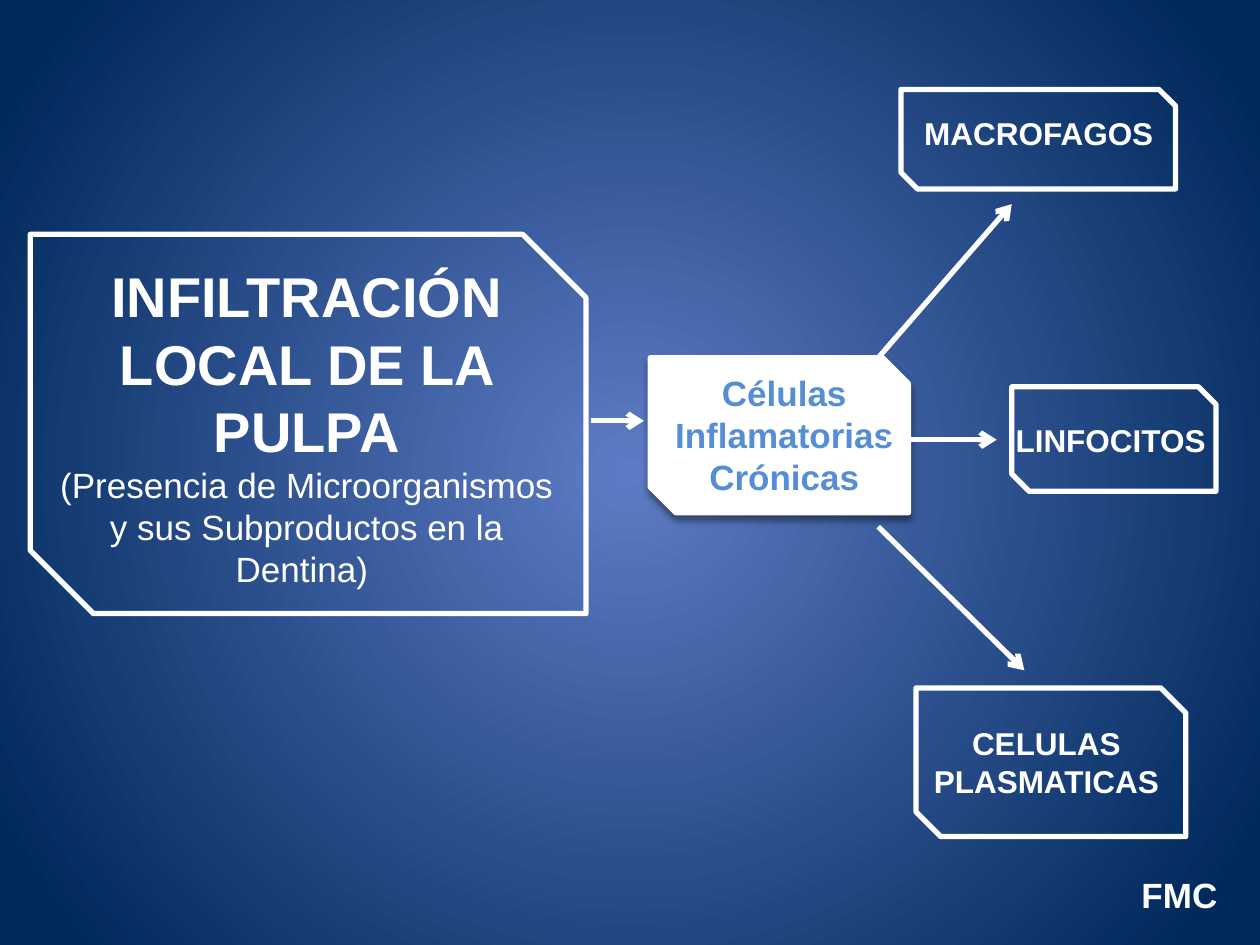
from lxml import etree
from pptx import Presentation, util as u
from pptx.dml.color import RGBColor
from pptx.enum import shapes, text
from pptx.oxml.ns import qn

COLORS = {"white": "FFFFFF", "blue": "558ED5", "glow": "5E7CC5",
          "navy": "00295C", "shadow": "000000"}
COLS, ROWS = 100, 75
W, H = u.Inches(10), u.Inches(7.5)


def rgb(name):
    return RGBColor.from_string(COLORS[name])


def place(col, row):
    """Turn a grid position or extent into slide lengths."""
    return round(W * col / COLS), round(H * row / ROWS)


def add(parent, tag, **attrs):
    return etree.SubElement(parent, qn(tag), attrs)


def paint_background(s):
    fill = s.background.fill
    fill.gradient()
    for stop, name, pos in zip(fill.gradient_stops, ("glow", "navy"), (0, 0.92)):
        stop.color.rgb, stop.position = rgb(name), pos
    grad = s.element.find(".//" + qn("a:gradFill"))
    grad.remove(grad.find(qn("a:lin")))
    radial = add(grad, "a:path", path="circle")
    add(radial, "a:fillToRect", l="50000", t="50000", r="50000", b="50000")


def add_frame(s, col, row, cols, rows, solid=False):
    """Box with two snipped corners; a solid one is filled and casts a shadow."""
    sp = s.shapes.add_shape(shapes.MSO_SHAPE.SNIP_2_DIAG_RECTANGLE,
                            *place(col, row), *place(cols, rows))
    sp.shadow.inherit = False
    sp.line.color.rgb, sp.line.width = rgb("white"), u.Pt(3)
    if not solid:
        sp.fill.background()
        return
    sp.fill.solid()
    sp.fill.fore_color.rgb = rgb("white")
    effects = sp.element.spPr.find(qn("a:effectLst"))
    shadow = add(effects, "a:outerShdw", blurRad=str(u.Pt(4)), dist=str(u.Pt(3)),
                 dir="5400000", rotWithShape="0")
    color = add(shadow, "a:srgbClr", val=COLORS["shadow"])
    add(color, "a:alpha", val="40000")


def add_arrow(s, start, end):
    ln = s.shapes.add_connector(shapes.MSO_CONNECTOR.STRAIGHT,
                                *place(*start), *place(*end))
    ln.line.color.rgb, ln.line.width = rgb("white"), u.Pt(3)
    add(ln.line._get_or_add_ln(), "a:tailEnd", type="arrow")
    add(ln._element.spPr, "a:effectLst")


def add_label(s, box, *lines, color="white", align=text.PP_ALIGN.CENTER,
              anchor=text.MSO_ANCHOR.TOP):
    """Each line is (words, size, bold) and becomes one paragraph."""
    col, row, cols, rows = box
    tf = s.shapes.add_textbox(*place(col, row), *place(cols, rows)).text_frame
    tf.word_wrap, tf.vertical_anchor = True, anchor
    for i, (words, size, bold) in enumerate(lines):
        p = tf.add_paragraph() if i else tf.paragraphs[0]
        p.alignment = align
        r = p.add_run()
        r.text = words
        for key, value in {"name": "Arial", "size": u.Pt(size), "bold": bold}.items():
            setattr(r.font, key, value)
        r.font.color.rgb = rgb(color)


def main():
    prs = Presentation()
    prs.slide_width, prs.slide_height = W, H
    s = prs.slides.add_slide(prs.slide_layouts[6])
    paint_background(s)

    # Central cells box
    add_frame(s, 51.6, 28.4, 20.5, 12.3, solid=True)

    # Cause and central labels
    add_label(s, (3.5, 20.3, 41.7, 27.3),
              ("INFILTRACIÓN LOCAL DE LA PULPA", 32, True),
              ("(Presencia de Microorganismos y sus Subproductos en la Dentina) ", 20, False))
    add_label(s, (51.6, 29, 21.3, 11.1),
              ("Células Inflamatorias Crónicas", 20, True), color="blue")

    # Cell types: label, text box, frame
    cells = [
        ("MACROFAGOS", (72.3, 8.6, 20.3, 4), (71.5, 7.1, 21.8, 7.9)),
        ("LINFOCITOS", (79.1, 32.9, 18.1, 4), (80.3, 30.7, 16.2, 8.3)),
        ("CELULAS PLASMATICAS", (72.7, 57, 20.7, 7.1), (72.7, 54.6, 21.4, 11.8)),
    ]
    for words, box, frame in cells:
        add_label(s, box, (words, 18, True))
        add_frame(s, *frame)

    # Cause frame
    add_frame(s, 2.4, 18.6, 44.1, 30.1)

    # Arrows from cause to cells, then to each cell type
    for start, end in [((46.9, 33.4), (51.1, 33.4)),
                       ((69.7, 28.4), (80.3, 16.2)),
                       ((70.3, 34.9), (79.1, 34.9)),
                       ((69.7, 41.8), (81.3, 53.2))]:
        add_arrow(s, start, end)

    # Signature
    add_label(s, (88.9, 69, 8.7, 4), ("FMC", 20, True),
              align=text.PP_ALIGN.RIGHT, anchor=text.MSO_ANCHOR.MIDDLE)

    prs.save("out.pptx")


if __name__ == "__main__":
    main()
